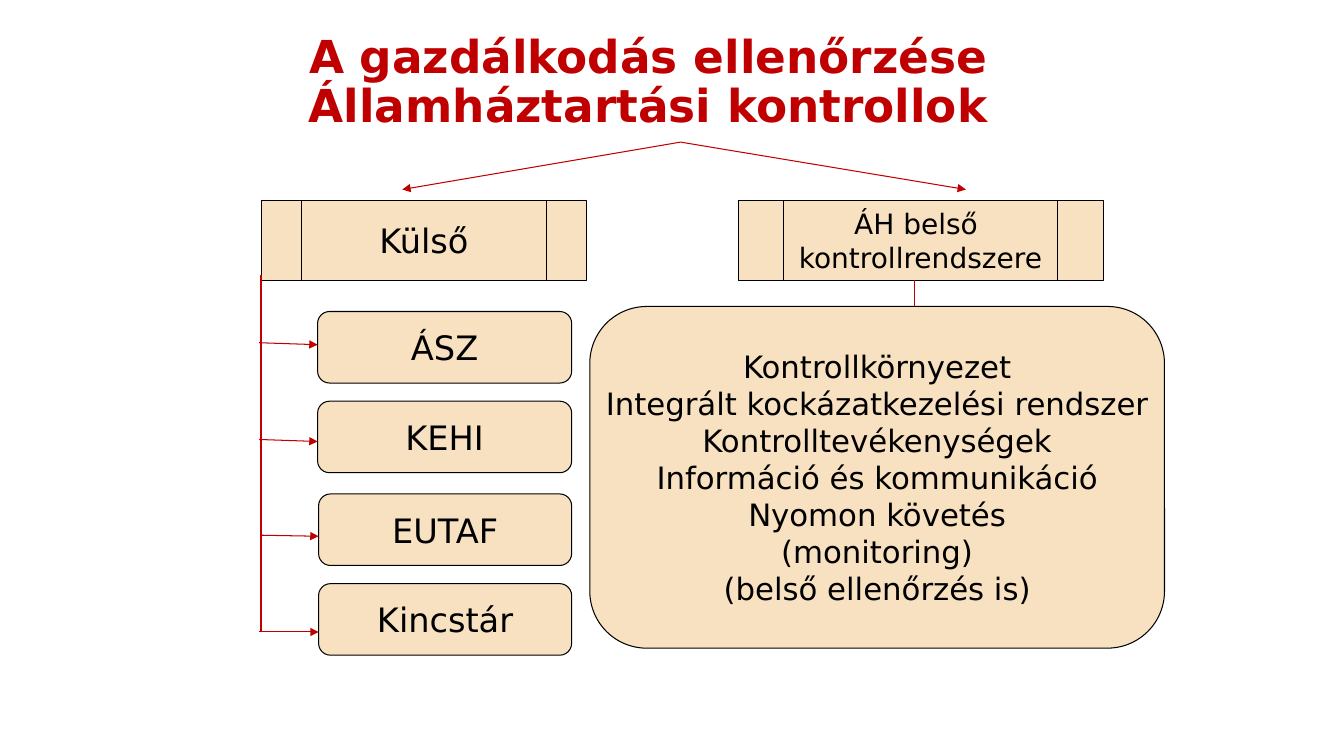
"""Build the slide on the external and internal controls of public finances."""
from dataclasses import dataclass

from lxml.etree import SubElement
from pptx import Presentation
from pptx.dml.color import RGBColor
from pptx.enum.shapes import MSO_CONNECTOR, MSO_SHAPE
from pptx.enum.text import MSO_ANCHOR, MSO_AUTO_SIZE, PP_ALIGN
from pptx.oxml.ns import qn
from pptx.slide import Slide
from pptx.util import Inches, Pt

FONT = "DejaVu Sans"
RED = RGBColor(0xC0, 0x00, 0x00)
SAND = RGBColor(0xF8, 0xE1, 0xC1)
BLACK = RGBColor(0x00, 0x00, 0x00)
HEADING = MSO_SHAPE.FLOWCHART_PREDEFINED_PROCESS
ROUNDED = MSO_SHAPE.FLOWCHART_ALTERNATE_PROCESS


@dataclass(frozen=True)
class Box:
    kind: MSO_SHAPE
    left: float
    top: float
    width: float
    height: float
    lines: tuple[str, ...]
    size: float = 24


@dataclass(frozen=True)
class Link:
    start: tuple[float, float]
    end: tuple[float, float]
    weight: float = 0.75
    arrow: bool = True


@dataclass(frozen=True)
class Body:
    name: str
    left: float
    top: float
    branch_start: tuple[float, float]
    branch_end: float


BODIES = (
    Body("ÁSZ", 3.15, 3.09, (2.57, 3.4), 3.42),
    Body("KEHI", 3.15, 3.98, (2.57, 4.36), 4.38),
    Body("EUTAF", 3.16, 4.9, (2.6, 5.31), 5.32),
    Body("Kincstár", 3.16, 5.79, (2.57, 6.27), 6.27),
)
BODY_RIGHT = 5.67
FORK = (6.75, 1.41)

BOXES = (
    Box(HEADING, 2.59, 1.99, 3.23, 0.79, ("Külső",)),
    Box(HEADING, 7.32, 1.99, 3.62, 0.79, ("ÁH belső ", "kontrollrendszere"), 20),
    *(Box(ROUNDED, body.left, body.top, BODY_RIGHT - body.left, 0.71, (body.name,))
      for body in BODIES),
    Box(ROUNDED, 5.85, 3.04, 5.7, 3.39, (
        "Kontrollkörnyezet",
        "Integrált kockázatkezelési rendszer",
        "Kontrolltevékenységek",
        "Információ és kommunikáció",
        "Nyomon követés",
        "(monitoring)",
        "(belső ellenőrzés is)",
    ), 22),
)

LINKS = (
    Link(FORK, (3.99, 1.88)),
    Link(FORK, (9.58, 1.88)),
    Link((9.07, 2.78), (9.07, 3.04), 1, False),
    Link((2.59, 2.73), (2.59, 6.27), 1.5, False),
    *(Link(body.branch_start, (body.left, body.branch_end)) for body in BODIES),
)


def add_run(paragraph, text: str, size: float, color: RGBColor, bold: bool = False) -> None:
    """Add one formatted run to a paragraph."""
    run = paragraph.add_run()
    run.text = text
    run.font.name = FONT
    run.font.size = Pt(size)
    run.font.bold = bold
    run.font.color.rgb = color


def add_title(slide: Slide) -> None:
    """Place and fill the two-line title."""
    title = slide.shapes.title
    title.left, title.top = Inches(1.43), Inches(0.36)
    title.width, title.height = Inches(10), Inches(0.94)
    frame = title.text_frame
    frame.auto_size = MSO_AUTO_SIZE.NONE
    frame.vertical_anchor = MSO_ANCHOR.MIDDLE
    heading = frame.paragraphs[0]
    heading.alignment = PP_ALIGN.CENTER
    heading.line_spacing = 0.9
    add_run(heading, "A gazdálkodás ellenőrzése", 32.4, RED, True)
    heading.add_line_break()
    add_run(heading, "Államháztartási kontrollok", 32.4, RED, True)


def add_box(slide: Slide, box: Box) -> None:
    """Draw a filled box with centred lines of text."""
    shape = slide.shapes.add_shape(
        box.kind, Inches(box.left), Inches(box.top), Inches(box.width), Inches(box.height))
    shape.shadow.inherit = False
    shape.fill.solid()
    shape.fill.fore_color.rgb = SAND
    shape.line.color.rgb = BLACK
    shape.line.width = Pt(0.75)
    frame = shape.text_frame
    frame.word_wrap = False
    frame.vertical_anchor = MSO_ANCHOR.MIDDLE
    for index, line in enumerate(box.lines):
        paragraph = frame.add_paragraph() if index else frame.paragraphs[0]
        paragraph.alignment = PP_ALIGN.CENTER
        add_run(paragraph, line, box.size, BLACK)


def add_link(slide: Slide, link: Link) -> None:
    """Draw a red line, with an arrowhead at its end if asked."""
    connector = slide.shapes.add_connector(
        MSO_CONNECTOR.STRAIGHT, *map(Inches, link.start + link.end))
    connector.line.color.rgb = RED
    connector.line.width = Pt(link.weight)
    if link.arrow:
        SubElement(connector.line._get_or_add_ln(), qn("a:tailEnd"), type="triangle")
    SubElement(connector._element.spPr, qn("a:effectLst"))


def main() -> None:
    """Build and save the presentation."""
    presentation = Presentation()
    presentation.slide_width = Inches(13.33)
    presentation.slide_height = Inches(7.5)
    slide = presentation.slides.add_slide(presentation.slide_layouts[5])
    add_title(slide)
    for box in BOXES:
        add_box(slide, box)
    for link in LINKS:
        add_link(slide, link)
    presentation.save("out.pptx")


if __name__ == "__main__":
    main()
